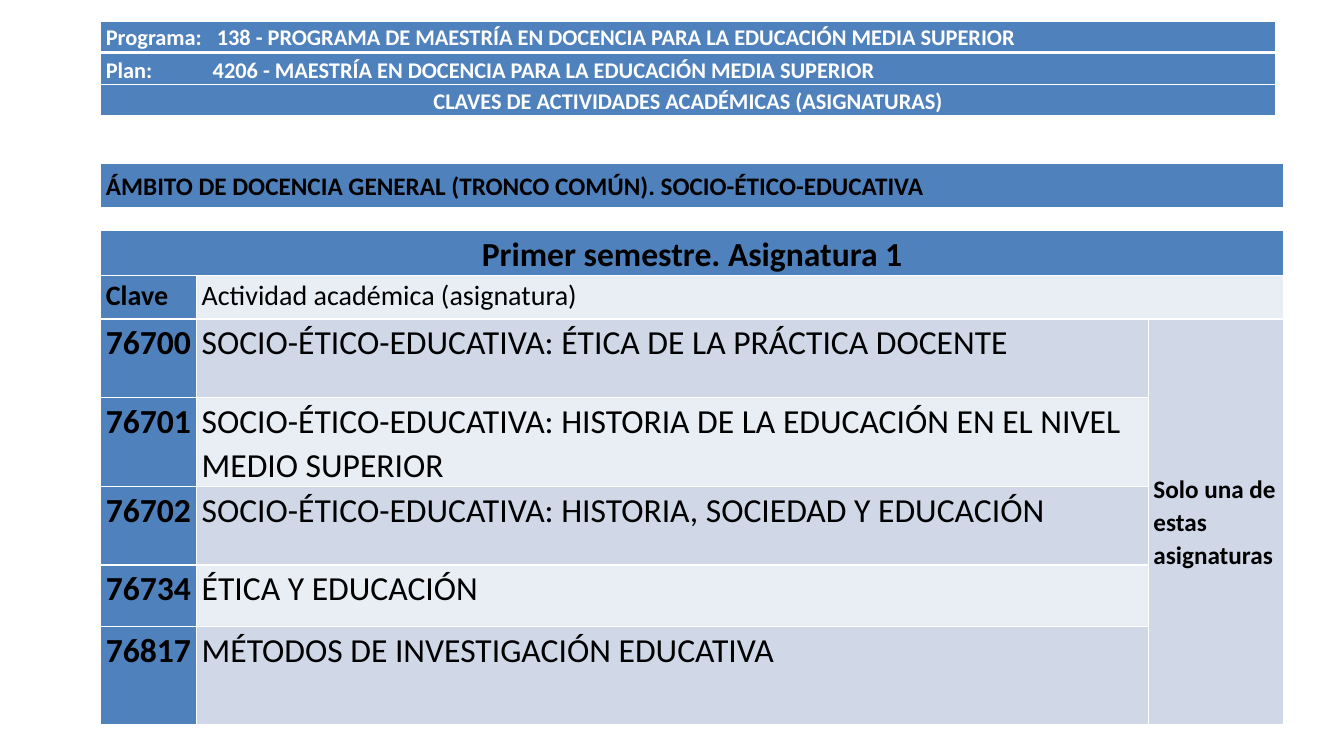
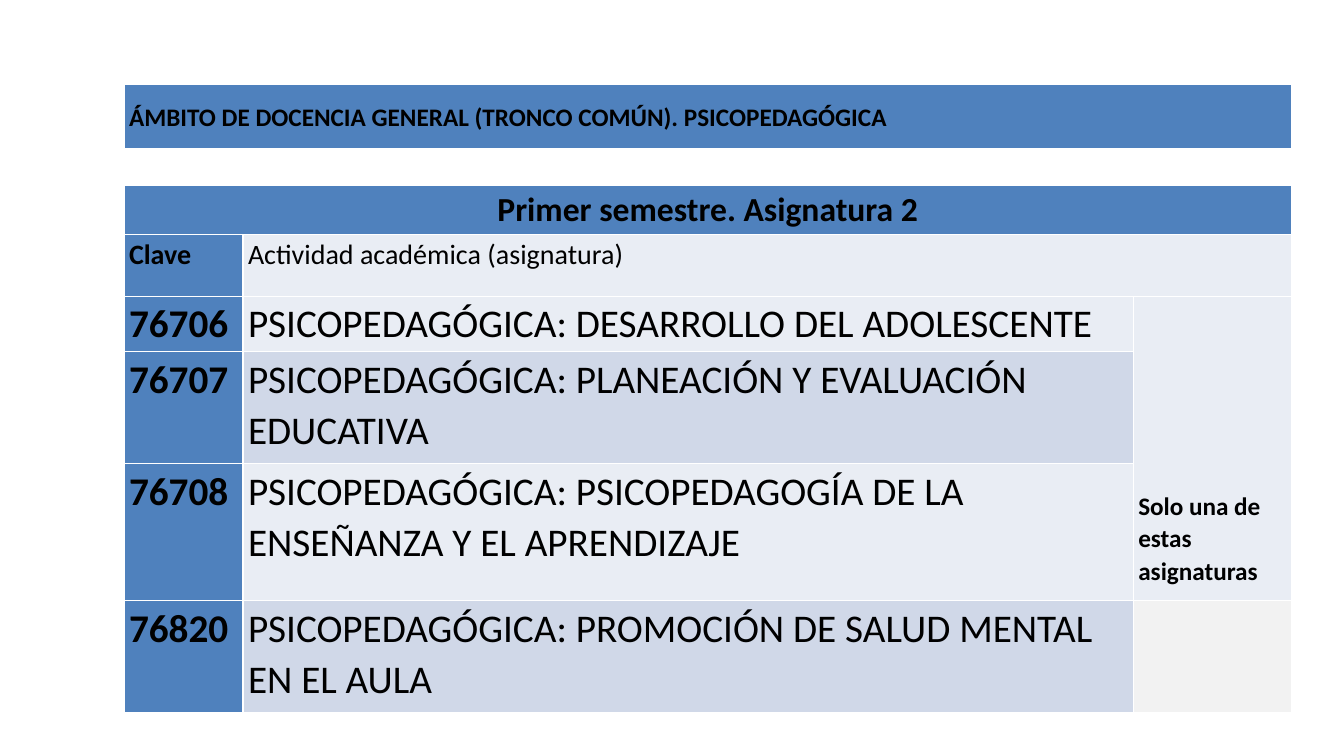
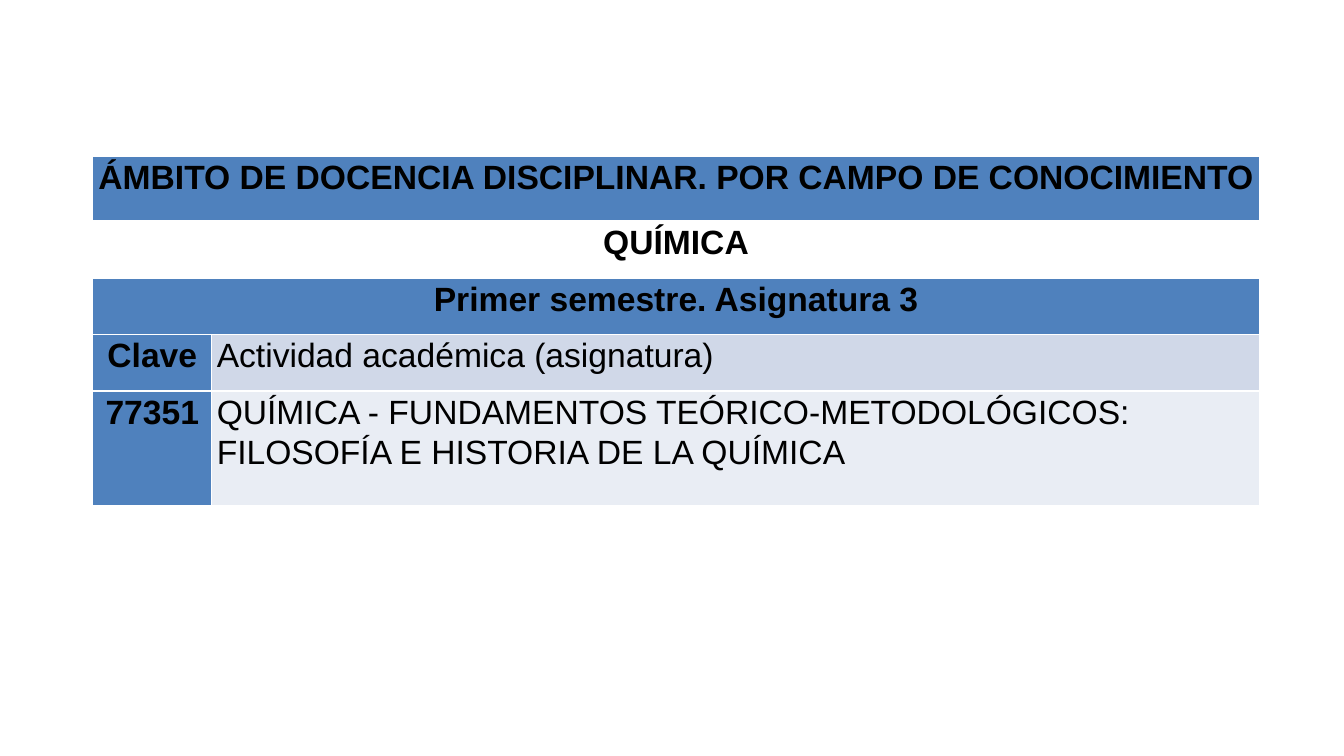
from lxml.etree import SubElement
from pptx import Presentation
from pptx.dml.color import RGBColor
from pptx.enum.text import MSO_ANCHOR, PP_ALIGN
from pptx.oxml import parse_xml
from pptx.oxml.ns import nsdecls, qn
from pptx.util import Inches, Pt

BLUE = RGBColor(0x4F, 0x81, 0xBD)
PALE = RGBColor(0xE9, 0xED, 0xF4)
MIST = RGBColor(0xD0, 0xD8, 0xE8)
GREY = RGBColor(0xF2, 0xF2, 0xF2)
WHITE = RGBColor(0xFF, 0xFF, 0xFF)
BLACK = RGBColor(0x00, 0x00, 0x00)

MID = MSO_ANCHOR.MIDDLE
LOW = MSO_ANCHOR.BOTTOM
CENTER = PP_ALIGN.CENTER
SPACE = {"line_spacing": 1.07, "space_after": Pt(8)}
CLUE = "Clave"
TOPIC = "Actividad académica (asignatura)"
NOTE = "Solo una de estas asignaturas"


def apply(item, form):
    for name, value in form.items():
        setattr(item, name, value)


def edge(cell, side, width):
    line = parse_xml(
        f'<a:ln{side} {nsdecls("a")} w="{Pt(width)}"><a:solidFill>'
        f'<a:srgbClr val="{WHITE}"/></a:solidFill></a:ln{side}>')
    cell._tc.get_or_add_tcPr().append(line)


def add_tab(para, inch):
    stops = SubElement(para._p.get_or_add_pPr(), qn("a:tabLst"))
    SubElement(stops, qn("a:tab"), pos=str(Inches(inch)), algn="l")


def dress(cell, inset, thick):
    apply(cell, {"margin_left": Inches(0.05), "margin_right": Inches(0.05),
                 "margin_top": Inches(inset), "margin_bottom": 0})
    for side in "LRTB":
        edge(cell, side, thick.get(side, 1))
    cell.fill.background()


def fill(cell, color):
    cell.fill.solid()
    cell.fill.fore_color.rgb = color


def write(cell, text, font, size=24, bold=True, color=BLACK, align=None,
          anchor=MSO_ANCHOR.TOP, tab=None, foot=0):
    apply(cell, {"vertical_anchor": anchor, "margin_bottom": Inches(foot)})
    para = cell.text_frame.paragraphs[0]
    apply(para, {**SPACE, "alignment": align})
    if tab:
        add_tab(para, tab)
    run = para.add_run()
    run.text = text
    apply(run.font, {"name": font, "size": Pt(size), "bold": bold})
    run.font.color.rgb = color


def add_grid(slide, left, top, cols, rows, parts, font="Calibri",
             inset=0.01, rule=None):
    frame = slide.shapes.add_table(
        len(rows), len(cols), Inches(left), Inches(top),
        Inches(sum(cols)), Inches(sum(rows)))
    table = frame.table
    apply(table, {"first_row": False, "horz_banding": False})
    for col, width in zip(table.columns, cols):
        col.width = Inches(width)
    for index, (row, height) in enumerate(zip(table.rows, rows)):
        row.height = Inches(height)
        thick = {"B": 3} if index == rule else {}
        if rule is not None and index == rule + 1:
            thick = {"T": 3}
        for cell in row.cells:
            dress(cell, inset, thick)
    for row, col, down, wide, color, text, form in parts:
        cell = table.cell(row, col)
        if down * wide > 1:
            cell.merge(table.cell(row + down - 1, col + wide - 1))
        if color is not None:
            fill(cell, color)
        if text:
            write(cell, text, font, **form)
    for row in table.rows:
        for cell in row.cells:
            para = cell.text_frame.paragraphs[0]
            if not para.runs:
                SubElement(para._p, qn("a:endParaRPr"), sz="800")


def add_head(slide):
    lines = [
        ("Programa:\t138 - PROGRAMA DE MAESTRÍA EN DOCENCIA PARA LA EDUCACIÓN MEDIA SUPERIOR",
         {"anchor": MID, "tab": 1.1}),
        ("Plan:\t4206 - MAESTRÍA EN DOCENCIA PARA LA EDUCACIÓN MEDIA SUPERIOR",
         {"anchor": LOW, "tab": 1.06}),
        ("CLAVES DE ACTIVIDADES ACADÉMICAS (ASIGNATURAS)",
         {"anchor": LOW, "align": CENTER}),
    ]
    parts = [(row, 0, 1, 1, BLUE, text, {"size": 16, "color": WHITE, **form})
             for row, (text, form) in enumerate(lines)]
    add_grid(slide, 1, 0.21, [11.65], [0.31, 0.32, 0.31], parts, rule=0)


def add_core(slide, left, top, cols, rows, field, term, items, tints, size,
             last):
    parts = [
        (0, 0, 1, 3, BLUE, f"ÁMBITO DE DOCENCIA GENERAL (TRONCO COMÚN). {field}",
         {"size": 18, "anchor": MID}),
        (1, 0, 1, 3, None, "", {}),
        (2, 0, 1, 3, BLUE, f"Primer semestre. Asignatura {term}",
         {"align": CENTER}),
        (3, 0, 1, 1, BLUE, CLUE, {"size": 20}),
        (3, 1, 1, 2, PALE, TOPIC, {"size": 20, "bold": False}),
    ]
    for index, (code, name) in enumerate(items):
        row = index + 4
        parts += [(row, 0, 1, 1, BLUE, code, {"size": size}),
                  (row, 1, 1, 1, tints[index % 2], name,
                   {"size": size, "bold": False})]
    add_grid(slide, left, top, cols, rows, parts + last)


def add_field(slide):
    parts = [
        (0, 0, 1, 2, BLUE,
         "ÁMBITO DE DOCENCIA DISCIPLINAR. POR CAMPO DE CONOCIMIENTO",
         {"align": CENTER}),
        (1, 0, 1, 2, WHITE, "QUÍMICA", {"align": CENTER}),
        (2, 0, 1, 2, BLUE, "Primer semestre. Asignatura 3", {"align": CENTER}),
        (3, 0, 1, 1, BLUE, CLUE, {"align": CENTER}),
        (3, 1, 1, 1, MIST, TOPIC, {"bold": False}),
        (4, 0, 1, 1, BLUE, "77351", {"align": CENTER}),
        (4, 1, 1, 1, PALE,
         "QUÍMICA - FUNDAMENTOS TEÓRICO-METODOLÓGICOS: FILOSOFÍA E HISTORIA DE LA QUÍMICA",
         {"bold": False}),
    ]
    add_grid(slide, 0.92, 1.55, [1.18, 10.39], [0.65] + [0.56] * 3 + [1.14],
             parts, font="Arial", inset=0, rule=0)


def main():
    deck = Presentation()
    apply(deck, {"slide_width": Inches(13.33), "slide_height": Inches(7.5)})
    first, second, third = [
        deck.slides.add_slide(deck.slide_layouts[6]) for _ in range(3)]
    add_head(first)
    add_core(
        first, 1, 1.62, [0.95, 9.44, 1.34],
        [0.44, 0.23, 0.43, 0.43, 0.78, 0.88, 0.78, 0.61, 0.97],
        "SOCIO-ÉTICO-EDUCATIVA", 1,
        [("76700", "SOCIO-ÉTICO-EDUCATIVA: ÉTICA DE LA PRÁCTICA DOCENTE"),
         ("76701", "SOCIO-ÉTICO-EDUCATIVA: HISTORIA DE LA EDUCACIÓN EN EL NIVEL MEDIO SUPERIOR"),
         ("76702", "SOCIO-ÉTICO-EDUCATIVA: HISTORIA, SOCIEDAD Y EDUCACIÓN"),
         ("76734", "ÉTICA Y EDUCACIÓN"),
         ("76817", "MÉTODOS DE INVESTIGACIÓN EDUCATIVA")],
        (MIST, PALE), 24,
        [(4, 2, 5, 1, MIST, NOTE, {"size": 18, "anchor": MID})])
    add_core(
        second, 1.23, 0.84, [1.18, 8.83, 1.57],
        [0.63, 0.37, 0.49, 0.61, 0.55, 1.11, 1.36, 1.11],
        "PSICOPEDAGÓGICA", 2,
        [("76706", "PSICOPEDAGÓGICA: DESARROLLO DEL ADOLESCENTE"),
         ("76707", "PSICOPEDAGÓGICA: PLANEACIÓN Y EVALUACIÓN EDUCATIVA"),
         ("76708", "PSICOPEDAGÓGICA: PSICOPEDAGOGÍA DE LA ENSEÑANZA Y EL APRENDIZAJE"),
         ("76820", "PSICOPEDAGÓGICA: PROMOCIÓN DE SALUD MENTAL EN EL AULA")],
        (PALE, MIST), 28,
        [(4, 2, 3, 1, PALE, NOTE, {"size": 18, "anchor": LOW, "foot": 0.13}),
         (7, 2, 1, 1, GREY, "", {})])
    add_field(third)
    deck.save("out.pptx")


if __name__ == "__main__":
    main()
